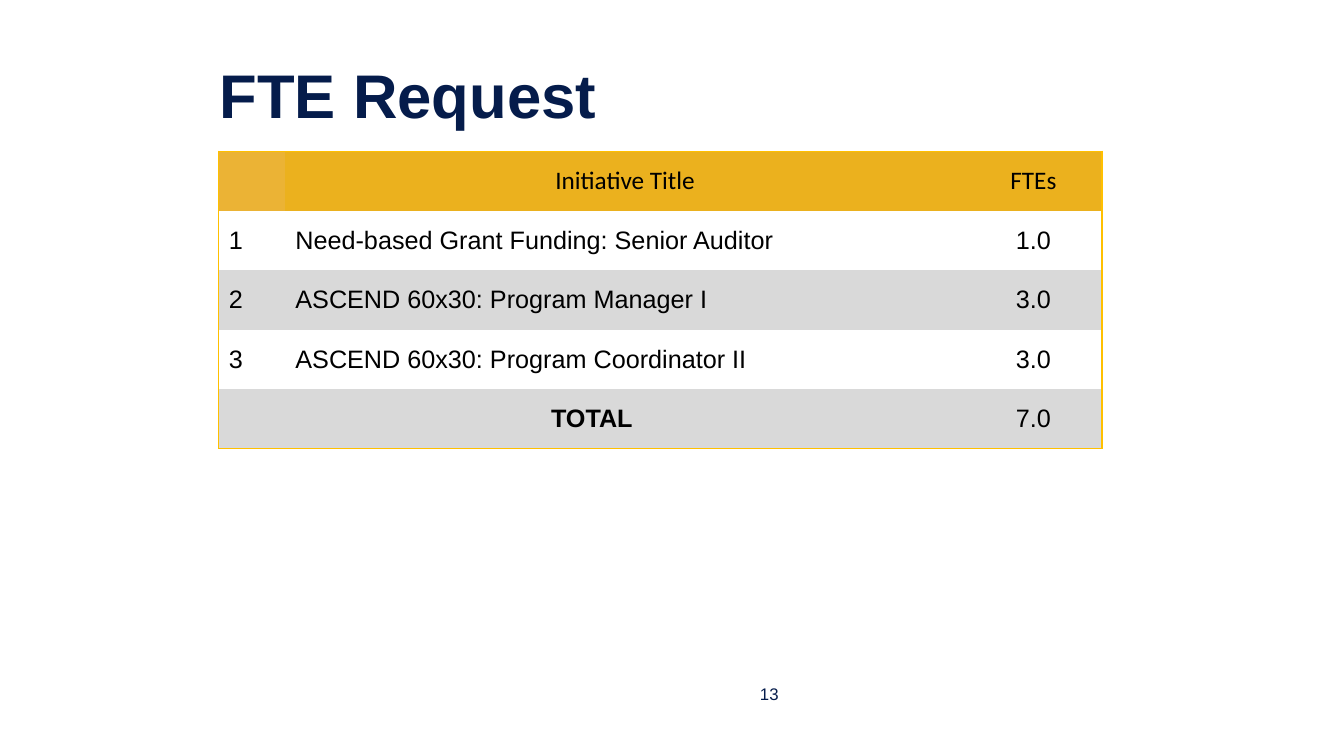
import dataclasses

import lxml.etree
import pptx
import pptx.dml.color
import pptx.enum.text
import pptx.oxml.ns
import pptx.util

Inches = pptx.util.Inches
Align = pptx.enum.text.PP_ALIGN
Anchor = pptx.enum.text.MSO_ANCHOR


@dataclasses.dataclass(frozen=True)
class Theme:
    navy: str = "051C4B"
    gold: str = "EBB11E"
    pale: str = "EBB335"
    edge: str = "FFC000"
    gray: str = "D9D9D9"
    white: str = "FFFFFF"
    black: str = "000000"
    sans: str = "Arial"
    head: str = "Calibri"
    title: int = 44
    body: int = 18
    small: int = 12


@dataclasses.dataclass(frozen=True)
class Row:
    mark: str
    name: str
    count: str


THEME = Theme()
ROWS = [
    Row("", "Initiative Title", "FTEs"),
    Row("1", "Need-based Grant Funding: Senior Auditor", "1.0"),
    Row("2", "ASCEND 60x30: Program Manager I", "3.0"),
    Row("3", "ASCEND 60x30: Program Coordinator II", "3.0"),
    Row("TOTAL", "", "7.0"),
]
WIDTHS = [0.66, 6.74, 1.36]
HEIGHT = 0.59


def color(code: str) -> pptx.dml.color.RGBColor:
    return pptx.dml.color.RGBColor.from_string(code)


def write(frame, text: str, size: int, ink: str, face: str = THEME.sans,
          bold: bool = False, align: Align = Align.LEFT) -> None:
    frame.text = text
    para = frame.paragraphs[0]
    para.alignment = align
    font = para.font
    font.name, font.size, font.bold = face, pptx.util.Pt(size), bold
    font.color.rgb = color(ink)


def place(shape, left: float, top: float, width: float, height: float) -> None:
    shape.left, shape.top = Inches(left), Inches(top)
    shape.width, shape.height = Inches(width), Inches(height)


def outline(cell, sides: dict[str, bool]) -> None:
    props = cell._tc.get_or_add_tcPr()
    tag = pptx.oxml.ns.qn
    for side, drawn in sides.items():
        line = lxml.etree.SubElement(props, tag(f"a:ln{side}"), w=str(pptx.util.Pt(1)))
        if drawn:
            fill = lxml.etree.SubElement(line, tag("a:solidFill"))
            lxml.etree.SubElement(fill, tag("a:srgbClr"), val=THEME.edge)
        else:
            lxml.etree.SubElement(line, tag("a:noFill"))


def shade(row: int, col: int) -> str:
    if row == 0:
        return THEME.gold if col else THEME.pale
    return THEME.white if row % 2 else THEME.gray


def add_grid(slide) -> None:
    last, end = len(ROWS) - 1, len(WIDTHS) - 1
    frame = slide.shapes.add_table(
        len(ROWS), len(WIDTHS), Inches(2.17), Inches(1.5),
        Inches(sum(WIDTHS)), Inches(HEIGHT * len(ROWS)))
    table = frame.table
    table.first_row = table.horz_banding = False
    for col, width in enumerate(WIDTHS):
        table.columns[col].width = Inches(width)
    for row, entry in enumerate(ROWS):
        table.rows[row].height = Inches(HEIGHT)
        for col, text in enumerate(dataclasses.astuple(entry)):
            cell = table.cell(row, col)
            outline(cell, {"L": col == 0, "R": col == end,
                           "T": row == 0, "B": row == last})
            cell.fill.solid()
            cell.fill.fore_color.rgb = color(shade(row, col))
            cell.vertical_anchor = Anchor.MIDDLE
            total = row == last and col == 0
            center = row == 0 or col == end or total
            write(cell.text_frame, text, THEME.body, THEME.black,
                  THEME.sans if row else THEME.head, total,
                  Align.CENTER if center else Align.LEFT)
    table.cell(last, 0).merge(table.cell(last, 1))


def main() -> None:
    deck = pptx.Presentation()
    deck.slide_width, deck.slide_height = Inches(13.33), Inches(7.5)
    slide = deck.slides.add_slide(deck.slide_layouts[5])

    title = slide.shapes.title
    place(title, 2.08, 0.31, 11.1, 1.25)
    title.text_frame.vertical_anchor = Anchor.MIDDLE
    write(title.text_frame, "FTE Request", THEME.title, THEME.navy, bold=True)

    add_grid(slide)

    page = slide.shapes.add_textbox(0, 0, 0, 0)
    place(page, 7.29, 6.68, 0.68, 0.4)
    page.text_frame.word_wrap = True
    page.text_frame.vertical_anchor = Anchor.MIDDLE
    write(page.text_frame, "13", THEME.small, THEME.navy, align=Align.CENTER)

    deck.save("out.pptx")


if __name__ == "__main__":
    main()
